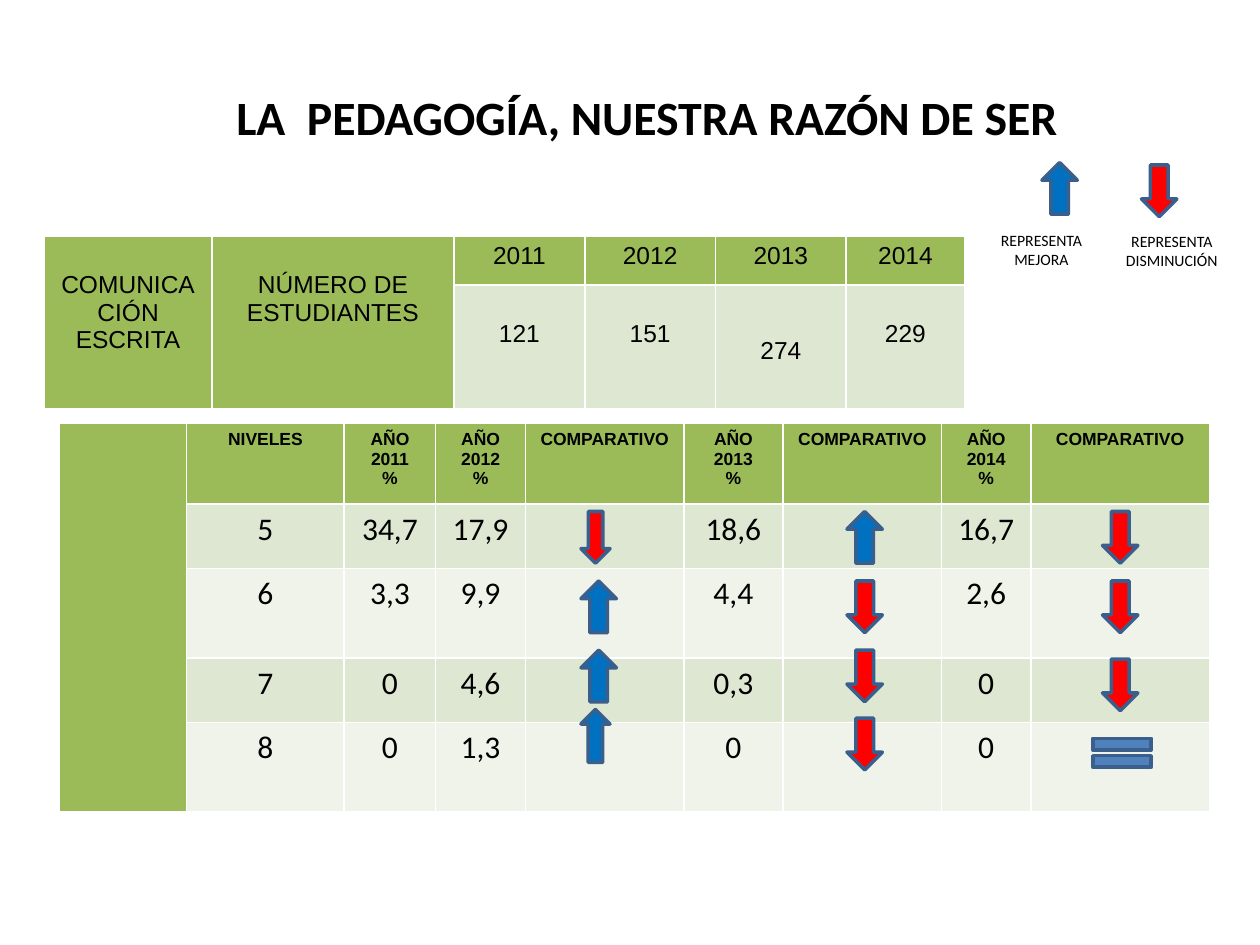
"""Build the slide comparing written communication results by year."""
from dataclasses import dataclass
from typing import Any, NamedTuple

from lxml.etree import SubElement
from pptx import Presentation
from pptx.dml.color import RGBColor
from pptx.enum.shapes import MSO_SHAPE
from pptx.enum.text import MSO_ANCHOR, MSO_AUTO_SIZE, PP_ALIGN
from pptx.oxml.ns import qn
from pptx.util import Pt


@dataclass(frozen=True)
class Theme:
    heading_font: str = "Arial"
    body_font: str = "Calibri"
    title_size: float = 27.3
    value_size: float = 18
    count_size: float = 14
    header_size: float = 10
    legend_size: float = 9
    text: str = "000000"
    green: str = "9BBB59"
    band_dark: str = "DEE7D1"
    band_light: str = "EFF3EA"
    border: str = "FFFFFF"
    outline: str = "3A5F8C"


class Style(NamedTuple):
    font: str
    size: float
    bold: bool = False


class Symbol(NamedTuple):
    shape: Any
    color: str
    rotation: float = 0


class Mark(NamedTuple):
    symbol: Symbol
    left: float
    top: float
    width: float = 20.2
    height: float = 29.5


class Legend(NamedTuple):
    text: str
    left: float
    top: float
    width: float


THEME = Theme()
TITLE = Style(THEME.body_font, THEME.title_size, True)
HEADER = Style(THEME.heading_font, THEME.header_size, True)
COUNT = Style(THEME.heading_font, THEME.count_size)
VALUE = Style(THEME.body_font, THEME.value_size)
LEGEND = Style(THEME.body_font, THEME.legend_size)

UP = Symbol(MSO_SHAPE.UP_ARROW, "0070C0")
DOWN = Symbol(MSO_SHAPE.UP_ARROW, "FF0000", 180)
EQUAL = Symbol(MSO_SHAPE.MATH_EQUAL, "4F81BD")

LEVEL_COLUMNS = [72.7, 90, 52.3, 51.3, 90.5, 56.7, 90.6, 51, 102]
LEVEL_ROWS = [46, 37, 51, 37, 51]
LEVELS = [
    ["", "NIVELES", "AÑO 2011\n%", "AÑO 2012\n%", "COMPARATIVO",
     "AÑO 2013\n%", "COMPARATIVO", "AÑO 2014\n%", "COMPARATIVO"],
    ["", "5", "34,7", "17,9", "", "18,6", "", "16,7", ""],
    ["", "6", "3,3", "9,9", "", "4,4", "", "2,6", ""],
    ["", "7", "0", "4,6", "", "0,3", "", "0", ""],
    ["", "8", "0", "1,3", "", "0", "", "0", ""],
]
STUDENT_COLUMNS = [95.8, 138.4, 74.7, 74.7, 74.7, 67.7]
STUDENT_ROWS = [28, 70]
STUDENTS = [
    ["COMUNICACIÓN ESCRITA", "NÚMERO DE ESTUDIANTES", "2011", "2012", "2013", "2014"],
    ["", "", "121", "151", "274", "229"],
]
MARKS = [
    Mark(UP, 595.4, 92.9), Mark(DOWN, 652.3, 94.3),
    Mark(DOWN, 332, 292.3, 16.6), Mark(UP, 332, 332),
    Mark(UP, 332, 371.5), Mark(UP, 332, 405.4, 16.6, 30.2),
    Mark(UP, 484, 292.3), Mark(DOWN, 484, 332),
    Mark(DOWN, 484, 371.5), Mark(DOWN, 484, 410.4),
    Mark(DOWN, 630, 292.3), Mark(DOWN, 630, 332), Mark(DOWN, 630, 376.6),
    Mark(EQUAL, 618.5, 416.2, 45.4, 28),
]
LEGENDS = [
    Legend("REPRESENTA MEJORA", 563.8, 128.2, 62.6),
    Legend("REPRESENTA DISMINUCIÓN", 633.6, 128.9, 72),
]


def apply(target: Any, values: dict[str, Any]) -> None:
    """Set each named format value on the target."""
    for name, value in values.items():
        setattr(target, name, value)


def place(target: Any, left: float, top: float, width: float, height: float) -> None:
    """Move and size an object in points."""
    apply(target, {"left": Pt(left), "top": Pt(top),
                   "width": Pt(width), "height": Pt(height)})


def write(frame: Any, text: str, style: Style) -> None:
    """Fill a text frame with centred paragraphs in one style."""
    frame.text = text
    for para in frame.paragraphs:
        para.alignment = PP_ALIGN.CENTER
        for span in para.runs:
            apply(span.font, {"name": style.font, "size": Pt(style.size), "bold": style.bold})
            span.font.color.rgb = RGBColor.from_string(THEME.text)


def paint(cell: Any, color: str) -> None:
    """Fill a cell and give it thin borders."""
    cell.fill.solid()
    cell.fill.fore_color.rgb = RGBColor.from_string(color)
    properties = cell._tc.get_or_add_tcPr()
    for index, side in enumerate(("lnL", "lnR", "lnT", "lnB")):
        line = SubElement(properties, qn(f"a:{side}"), w=str(Pt(1)))
        fill = SubElement(line, qn("a:solidFill"))
        SubElement(fill, qn("a:srgbClr"), val=THEME.border)
        properties.insert(index, line)


def add_grid(page: Any, left: float, top: float, columns: list[float],
             rows: list[float], texts: list[list[str]], styles: list[Style],
             merged: int) -> Any:
    """Add a banded table whose first columns are merged downwards."""
    table = page.shapes.add_table(len(rows), len(columns), Pt(left), Pt(top),
                                  Pt(sum(columns)), Pt(sum(rows))).table
    for column, width in zip(table.columns, columns):
        column.width = Pt(width)
    for row, height in zip(table.rows, rows):
        row.height = Pt(height)
    for i, line in enumerate(texts):
        band = THEME.band_dark if i % 2 else THEME.band_light
        for j, text in enumerate(line):
            cell = table.cell(i, j)
            paint(cell, THEME.green if i == 0 or j < merged else band)
            write(cell.text_frame, text, styles[min(i, 1)])
    for j in range(merged):
        table.cell(0, j).merge(table.cell(len(rows) - 1, j))
    return table


def add_mark(page: Any, mark: Mark) -> None:
    """Draw a trend symbol."""
    shape = page.shapes.add_shape(mark.symbol.shape, Pt(mark.left), Pt(mark.top),
                                  Pt(mark.width), Pt(mark.height))
    shape.rotation = mark.symbol.rotation
    shape.shadow.inherit = False
    shape.fill.solid()
    shape.fill.fore_color.rgb = RGBColor.from_string(mark.symbol.color)
    shape.line.color.rgb = RGBColor.from_string(THEME.outline)
    shape.line.width = Pt(2)


def add_legend(page: Any, legend: Legend) -> None:
    """Add the caption below a legend arrow."""
    box = page.shapes.add_textbox(Pt(legend.left), Pt(legend.top), Pt(legend.width), Pt(29))
    box.text_frame.word_wrap = True
    write(box.text_frame, legend.text, LEGEND)


def main() -> None:
    """Build and save the deck."""
    deck = Presentation()
    apply(deck, {"slide_width": Pt(720), "slide_height": Pt(540)})
    page = deck.slides.add_slide(deck.slide_layouts[5])
    title = page.shapes.title
    place(title, 0, 21.6, 648, 90)
    apply(title.text_frame, {"margin_left": Pt(98.5), "word_wrap": True,
                             "auto_size": MSO_AUTO_SIZE.NONE,
                             "vertical_anchor": MSO_ANCHOR.MIDDLE})
    write(title.text_frame, "LA  PEDAGOGÍA, NUESTRA RAZÓN DE SER", TITLE)
    add_grid(page, 34, 242, LEVEL_COLUMNS, LEVEL_ROWS, LEVELS, [HEADER, VALUE], 1)
    students = add_grid(page, 25.3, 135, STUDENT_COLUMNS, STUDENT_ROWS, STUDENTS,
                        [COUNT, COUNT], 2)
    for j in range(len(STUDENT_COLUMNS)):
        cell = students.cell(0 if j < 2 else 1, j)
        cell.margin_top = Pt(30 if cell.text_frame.text == "274" else 20)
    for mark in MARKS:
        add_mark(page, mark)
    for legend in LEGENDS:
        add_legend(page, legend)
    deck.save("out.pptx")


if __name__ == "__main__":
    main()
